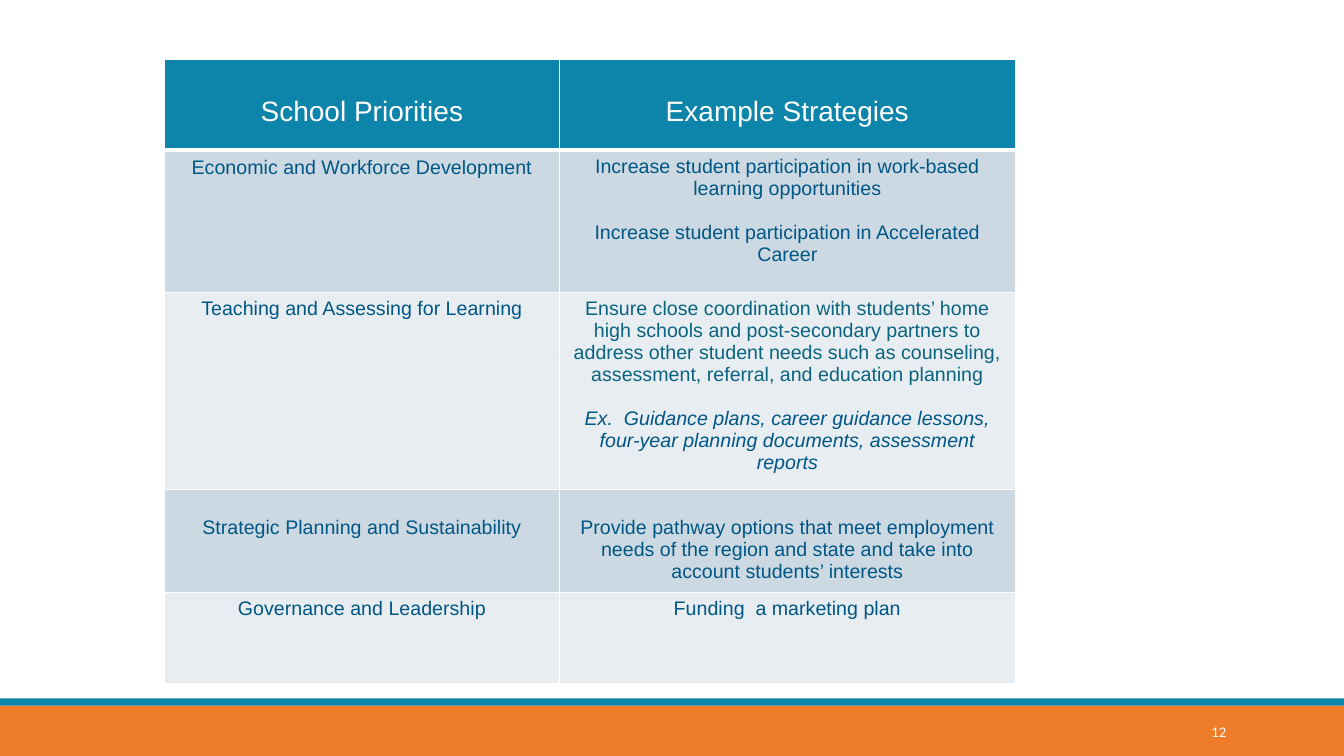
from dataclasses import dataclass

from lxml.etree import SubElement
from pptx import Presentation
from pptx.dml.color import RGBColor
from pptx.enum.shapes import MSO_SHAPE
from pptx.enum.text import MSO_ANCHOR, PP_ALIGN
from pptx.oxml.ns import qn
from pptx.slide import Slide
from pptx.table import _Cell
from pptx.util import Inches, Pt

WHITE = RGBColor(0xFF, 0xFF, 0xFF)
TEAL = RGBColor(0x0D, 0x85, 0xAB)
DARK_TEAL = RGBColor(0x0A, 0x64, 0x80)
NAVY = RGBColor(0x00, 0x56, 0x85)
ORANGE = RGBColor(0xEE, 0x7C, 0x29)
BAND_DARK = RGBColor(0xCC, 0xD9, 0xE2)
BAND_LIGHT = RGBColor(0xE7, 0xED, 0xF1)

HEADING_FONT = {"name": "Arial", "size": Pt(20), "bold": False}
BODY_FONT = {"name": "Arial", "size": Pt(14), "bold": False}
NUMBER_FONT = {"name": "Calibri", "size": Pt(10.5)}

COLUMN_WIDTHS = (3.92, 4.52)
PARAGRAPH_GAP = Pt(16)


@dataclass(frozen=True)
class Passage:
    text: str
    color: RGBColor = NAVY
    italic: bool = False
    line_spacing: float = 1.0


@dataclass(frozen=True)
class PriorityRow:
    height: float
    priority: Passage
    strategies: tuple[Passage, ...]
    margin_top: float = 0.05


@dataclass(frozen=True)
class FooterBar:
    top: float
    height: float
    color: RGBColor


HEADINGS = PriorityRow(
    0.9,
    Passage("School Priorities", WHITE),
    (Passage("Example Strategies", WHITE),),
    margin_top=0.36,
)

PRIORITIES = (
    PriorityRow(
        1.41,
        Passage("Economic and Workforce Development", line_spacing=1.07),
        (
            Passage("Increase student participation in work-based learning opportunities"),
            Passage("Increase student participation in Accelerated Career"),
        ),
    ),
    PriorityRow(
        1.85,
        Passage("Teaching and Assessing for Learning"),
        (
            Passage(
                "Ensure close coordination with students’ home high schools and "
                "post-secondary partners to address other student needs such as "
                "counseling, assessment, referral, and education planning",
                DARK_TEAL,
            ),
            Passage(
                "Ex.  Guidance plans, career guidance lessons, four-year planning "
                "documents, assessment reports",
                italic=True,
            ),
        ),
    ),
    PriorityRow(
        0.97,
        Passage("Strategic Planning and Sustainability"),
        (
            Passage(
                "Provide pathway options that meet employment needs of the region "
                "and state and take into account students’ interests"
            ),
        ),
        margin_top=0.27,
    ),
    PriorityRow(
        0.9,
        Passage("Governance and Leadership"),
        (Passage("Funding  a marketing plan"),),
    ),
)

FOOTER_BARS = (FooterBar(7, 0.5, ORANGE), FooterBar(6.93, 0.07, TEAL))


def apply_format(target: object, values: dict) -> None:
    for attribute, value in values.items():
        setattr(target, attribute, value)


def add_borders(cell: _Cell, widths: dict[str, float]) -> None:
    """Draw white borders; must run before the cell's fill is set."""
    properties = cell._tc.get_or_add_tcPr()
    for side, width in widths.items():
        line = SubElement(properties, qn(f"a:ln{side}"), w=str(Pt(width)))
        fill = SubElement(line, qn("a:solidFill"))
        SubElement(fill, qn("a:srgbClr"), val=str(WHITE))


def fill_cell(cell: _Cell, passages: tuple[Passage, ...], font: dict,
              background: RGBColor, margin_top: float, borders: dict[str, float]) -> None:
    add_borders(cell, borders)
    cell.fill.solid()
    cell.fill.fore_color.rgb = background
    cell.margin_top = Inches(margin_top)
    cell.vertical_anchor = MSO_ANCHOR.TOP
    frame = cell.text_frame
    for index, passage in enumerate(passages):
        paragraph = frame.add_paragraph() if index else frame.paragraphs[0]
        paragraph.alignment = PP_ALIGN.CENTER
        paragraph.line_spacing = passage.line_spacing
        if index:
            paragraph.space_before = PARAGRAPH_GAP
        run = paragraph.add_run()
        run.text = passage.text
        apply_format(run.font, font | {"italic": passage.italic})
        run.font.color.rgb = passage.color


def add_priorities_table(slide: Slide) -> None:
    rows = (HEADINGS, *PRIORITIES)
    table = slide.shapes.add_table(
        len(rows), len(COLUMN_WIDTHS), Inches(1.63), Inches(0.59),
        Inches(sum(COLUMN_WIDTHS)), Inches(sum(row.height for row in rows)),
    ).table
    for column, width in zip(table.columns, COLUMN_WIDTHS):
        column.width = Inches(width)
    for index, row in enumerate(rows):
        table.rows[index].height = Inches(row.height)
        if row is HEADINGS:
            font, background = HEADING_FONT, TEAL
        else:
            font = BODY_FONT
            background = BAND_DARK if index % 2 else BAND_LIGHT
        borders = {"L": 1, "R": 1, "T": 3 if index == 1 else 1,
                   "B": 3 if index == 0 else 1}
        for cell, passages in zip(table.rows[index].cells,
                                  ((row.priority,), row.strategies)):
            fill_cell(cell, passages, font, background, row.margin_top, borders)


def add_footer(slide: Slide, slide_width: int) -> None:
    for bar in FOOTER_BARS:
        strip = slide.shapes.add_shape(
            MSO_SHAPE.RECTANGLE, 0, Inches(bar.top), slide_width, Inches(bar.height))
        strip.shadow.inherit = False
        strip.fill.solid()
        strip.fill.fore_color.rgb = bar.color
        strip.line.fill.background()

    page_number = slide.shapes.add_textbox(
        Inches(10.83), Inches(7.06), Inches(1.43), Inches(0.4)).text_frame
    apply_format(page_number, {"word_wrap": True, "vertical_anchor": MSO_ANCHOR.MIDDLE})
    paragraph = page_number.paragraphs[0]
    paragraph.alignment = PP_ALIGN.RIGHT
    run = paragraph.add_run()
    run.text = "12"
    apply_format(run.font, NUMBER_FONT)
    run.font.color.rgb = WHITE


def main() -> None:
    presentation = Presentation()
    presentation.slide_width = Inches(13.33)
    presentation.slide_height = Inches(7.5)
    slide = presentation.slides.add_slide(presentation.slide_layouts[6])
    add_footer(slide, presentation.slide_width)
    add_priorities_table(slide)
    presentation.save("out.pptx")


if __name__ == "__main__":
    main()
